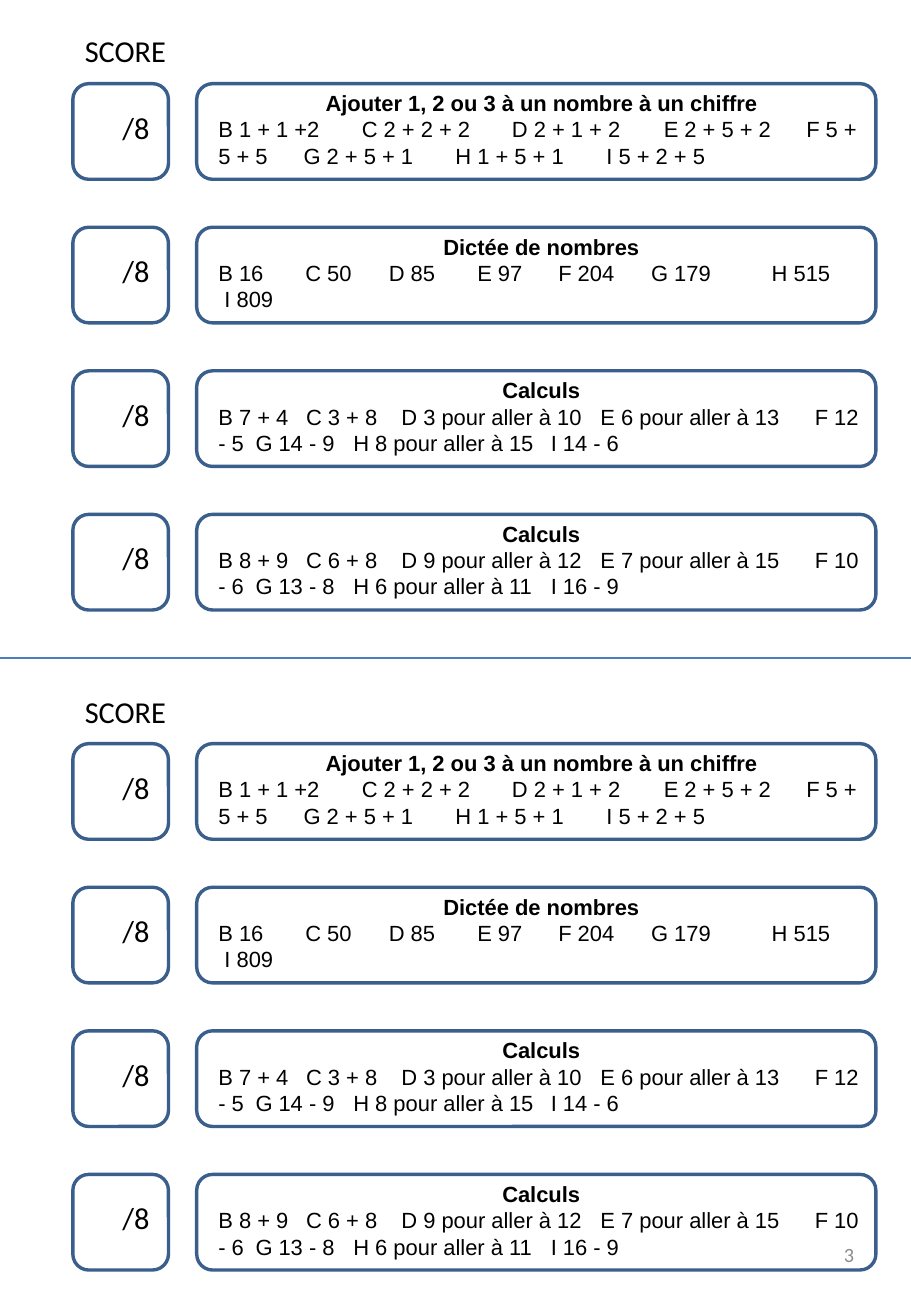
from dataclasses import dataclass

from lxml.etree import SubElement
from pptx import Presentation
from pptx.dml.color import RGBColor
from pptx.enum.shapes import MSO_CONNECTOR, MSO_SHAPE
from pptx.enum.text import MSO_ANCHOR, MSO_AUTO_SIZE, PP_ALIGN
from pptx.oxml.ns import qn
from pptx.util import Pt


@dataclass(frozen=True)
class Theme:
    outline: RGBColor = RGBColor(0x3A, 0x5F, 0x8C)
    divider: RGBColor = RGBColor(0x4B, 0x7E, 0xBC)
    ink: RGBColor = RGBColor(0, 0, 0)
    muted: RGBColor = RGBColor(0x8C, 0x8C, 0x8C)
    score_font: str = "Calibri"
    exercise_font: str = "Arial"
    score_size: float = 18
    exercise_size: float = 13
    number_size: float = 12


# Layout, in points
PAGE_WIDTH, PAGE_HEIGHT = 540, 780
HALF_PITCH = 391.2
ROW_TOP, ROW_PITCH = 49.6, 85.1
SCORE_LEFT, FRAME_SIZE = 43.2, 56.7
EXERCISE_LEFT, EXERCISE_WIDTH = 116.6, 402.6
TEXT_SHIFT = 5.8

# Each exercise: title, tab stops for both wrapped lines, answers
SUM_STOPS = (50.5, 85, 140.5, 174, 230, 264, 348.5)
NUMBER_STOPS = (51.5, 101, 153.5, 201.5, 256.5, 328)
CALCULATION_STOPS = (22, 52, 80, 108.5, 197, 226.5, 353.5)
EXERCISES = [
    ("Ajouter 1, 2 ou 3 à un nombre à un chiffre", SUM_STOPS,
     ["B 1 + 1 +2", "C 2 + 2 + 2", "D 2 + 1 + 2", "E 2 + 5 + 2",
      "F 5 + 5 + 5", "G 2 + 5 + 1", "H 1 + 5 + 1", "I 5 + 2 + 5"]),
    ("Dictée de nombres", NUMBER_STOPS,
     ["B 16", "C 50", "D 85", "E 97", "F 204", "G 179", "H 515\v I 809"]),
    ("Calculs", CALCULATION_STOPS,
     ["B 7 + 4", "C 3 + 8", "D 3 pour aller à 10", "E 6 pour aller à 13",
      "F 12 - 5", "G 14 - 9", "H 8 pour aller à 15", "I 14 - 6"]),
    ("Calculs", CALCULATION_STOPS,
     ["B 8 + 9", "C 6 + 8", "D 9 pour aller à 12", "E 7 pour aller à 15",
      "F 10 - 6", "G 13 - 8", "H 6 pour aller à 11", "I 16 - 9"]),
]


class Sheet:
    def __init__(self, page, theme):
        self.page = page
        self.theme = theme

    def divider(self, top):
        line = self.page.shapes.add_connector(
            MSO_CONNECTOR.STRAIGHT, Pt(0), Pt(top), Pt(PAGE_WIDTH), Pt(top))
        line.line.color.rgb = self.theme.divider
        line.line.width = Pt(0.75)
        SubElement(line._element.spPr, qn("a:effectLst"))

    def frame(self, left, top, width):
        shape = self.page.shapes.add_shape(
            MSO_SHAPE.FLOWCHART_ALTERNATE_PROCESS,
            Pt(left), Pt(top), Pt(width), Pt(FRAME_SIZE))
        shape.shadow.inherit = False
        shape.fill.background()
        shape.line.color.rgb = self.theme.outline
        shape.line.width = Pt(2)

    def text_box(self, left, top, width, height, grow=True):
        box = self.page.shapes.add_textbox(Pt(left), Pt(top), Pt(width), Pt(height))
        frame = box.text_frame
        frame.word_wrap = True
        frame.auto_size = MSO_AUTO_SIZE.SHAPE_TO_FIT_TEXT if grow else MSO_AUTO_SIZE.NONE
        return frame

    def span(self, para, text, font, size, color, bold=False):
        for index, part in enumerate(text.split("\v")):
            if index:
                para.add_line_break()
            span = para.add_run()
            span.text = part
            span.font.name = font
            span.font.size = Pt(size)
            span.font.color.rgb = color
            span.font.bold = bold

    def tab_stops(self, para, stops):
        tabs = SubElement(para._p.get_or_add_pPr(), qn("a:tabLst"))
        for stop in stops:
            SubElement(tabs, qn("a:tab"), pos=str(int(Pt(stop))), algn="l")

    def score_text(self, text, left, top, width, indent=7.2):
        frame = self.text_box(left, top, width, 29)
        frame.margin_left = Pt(indent)
        self.span(frame.paragraphs[0], text, self.theme.score_font,
                  self.theme.score_size, self.theme.ink)

    def exercise_text(self, top, title, stops, answers):
        style = (self.theme.exercise_font, self.theme.exercise_size, self.theme.ink)
        frame = self.text_box(EXERCISE_LEFT + TEXT_SHIFT, top,
                              EXERCISE_WIDTH - TEXT_SHIFT, 54.7)
        heading = frame.paragraphs[0]
        heading.alignment = PP_ALIGN.CENTER
        self.span(heading, title, *style, bold=True)
        para = frame.add_paragraph()
        self.tab_stops(para, stops)
        self.span(para, "\t".join(answers), *style)

    def page_number(self, text):
        frame = self.text_box(387.4, 722.9, 126, 41.5, grow=False)
        frame.vertical_anchor = MSO_ANCHOR.MIDDLE
        para = frame.paragraphs[0]
        para.alignment = PP_ALIGN.RIGHT
        self.span(para, text, self.theme.score_font,
                  self.theme.number_size, self.theme.muted)


def main():
    deck = Presentation()
    deck.slide_width, deck.slide_height = Pt(PAGE_WIDTH), Pt(PAGE_HEIGHT)
    sheet = Sheet(deck.slides.add_slide(deck.slide_layouts[6]), Theme())

    # Cutting line between the two halves
    sheet.divider(PAGE_HEIGHT / 2)

    # The same score card in each half
    for half in range(2):
        offset = half * HALF_PITCH
        sheet.score_text("SCORE", SCORE_LEFT, 15.8 + offset, 96.5)
        for row, (title, stops, answers) in enumerate(EXERCISES):
            top = ROW_TOP + offset + row * ROW_PITCH
            sheet.frame(SCORE_LEFT, top, FRAME_SIZE)
            sheet.score_text("/8", SCORE_LEFT + TEXT_SHIFT, top + 11.3,
                             FRAME_SIZE, indent=23.5)
            sheet.frame(EXERCISE_LEFT, top, EXERCISE_WIDTH)
            sheet.exercise_text(top, title, stops, answers)

    # Page number
    sheet.page_number("3")
    deck.save("out.pptx")


if __name__ == "__main__":
    main()
